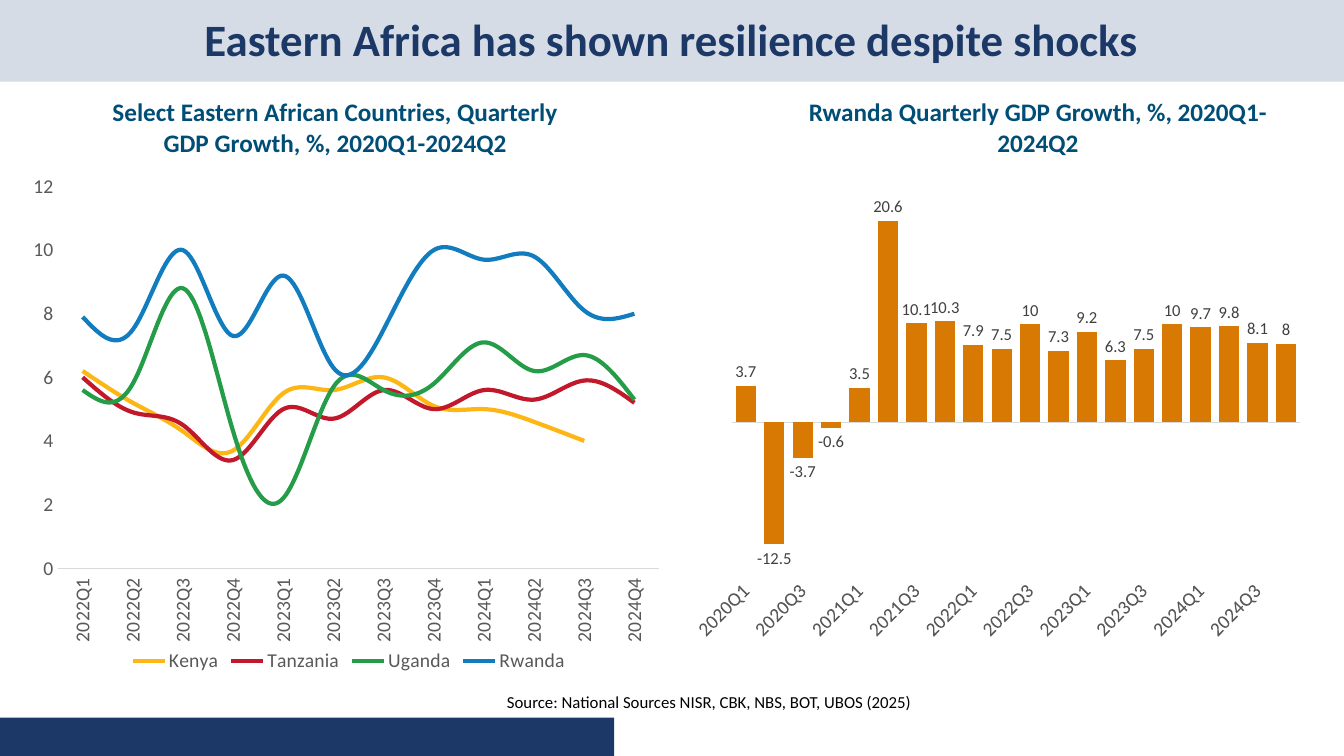
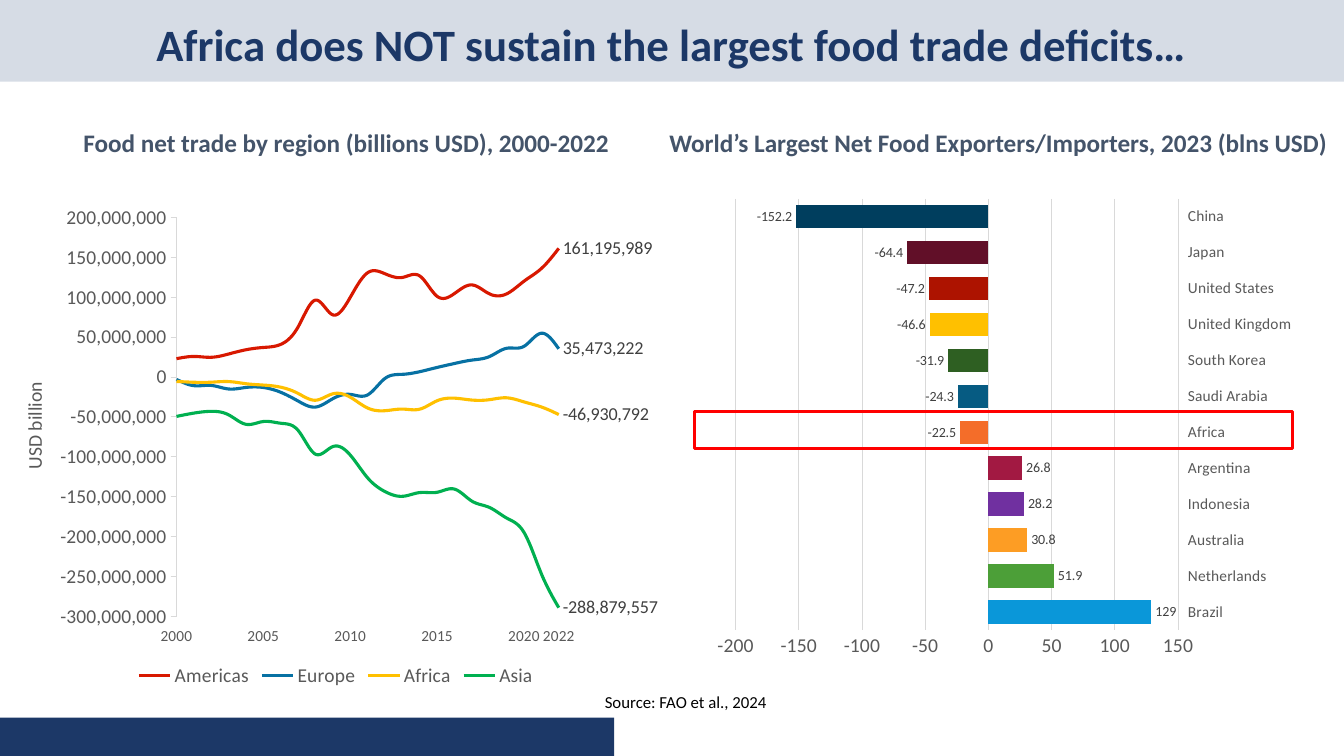
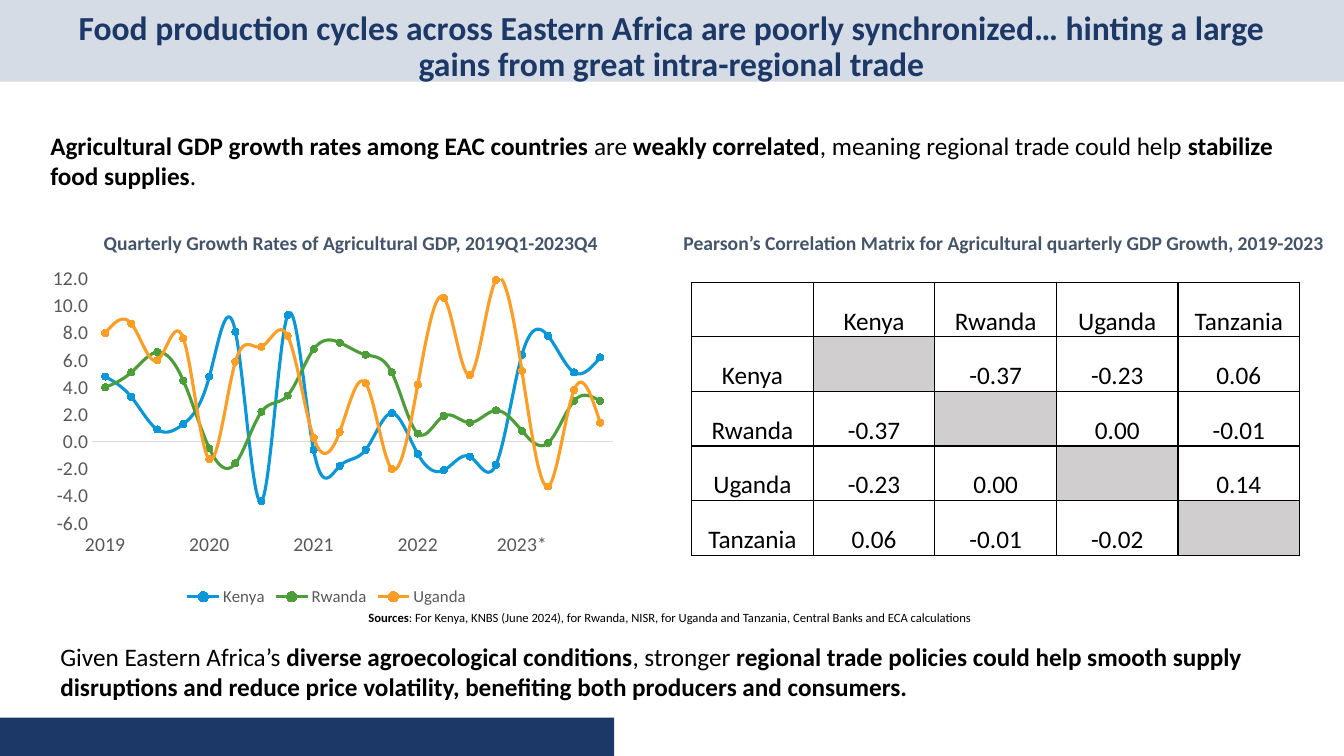
import pptx
import pptx.chart.data
import pptx.dml.color
import pptx.enum.chart
import pptx.enum.shapes
import pptx.enum.text
import pptx.oxml
import pptx.oxml.ns
import pptx.util

Inches, Pt = pptx.util.Inches, pptx.util.Pt
RGBColor = pptx.dml.color.RGBColor
XL_CHART_TYPE = pptx.enum.chart.XL_CHART_TYPE
XL_LABEL_POSITION = pptx.enum.chart.XL_LABEL_POSITION
XL_LEGEND_POSITION = pptx.enum.chart.XL_LEGEND_POSITION
XL_MARKER_STYLE = pptx.enum.chart.XL_MARKER_STYLE
XL_TICK_LABEL_POSITION = pptx.enum.chart.XL_TICK_LABEL_POSITION
XL_TICK_MARK = pptx.enum.chart.XL_TICK_MARK
MSO_SHAPE = pptx.enum.shapes.MSO_SHAPE
MSO_ANCHOR = pptx.enum.text.MSO_ANCHOR
PP_ALIGN = pptx.enum.text.PP_ALIGN
qn = pptx.oxml.ns.qn

FONT = "Calibri"
NAVY = RGBColor(0x1C, 0x38, 0x67)
PALE = RGBColor(0xD6, 0xDC, 0xE5)
TEAL = RGBColor(0x00, 0x4E, 0x76)
SLATE = RGBColor(0x44, 0x54, 0x6A)
BLACK = RGBColor(0, 0, 0)
RED = RGBColor(0xFF, 0, 0)
AXIS_TEXT = RGBColor(0x59, 0x59, 0x59)
LABEL_TEXT = RGBColor(0x40, 0x40, 0x40)
GRID = RGBColor(0xD9, 0xD9, 0xD9)
CELL_GREY = RGBColor(0xD0, 0xCE, 0xCE)
OCHRE = RGBColor(0xD7, 0x79, 0x02)
COUNTRY_COLORS = [RGBColor.from_string(c) for c in ("FEB614", "C1182C", "259C48", "117DBE")]
REGION_COLORS = [RGBColor.from_string(c) for c in ("D81800", "0771A3", "FFC000", "00B050")]
FARM_COLORS = [RGBColor.from_string(c) for c in ("0A97D9", "4C9F38", "FD9D24")]
TRADER_COLORS = [RGBColor.from_string(c) for c in (
    "0A97D9", "4C9F38", "FD9D24", "7030A0", "A21942", "F46D29",
    "065B82", "2E5F22", "FFC000", "AD1300", "610F28", "003E5E")]

GROWTH = {
    "Kenya": (6.2, 5.2, 4.3, 3.7, 5.5, 5.6, 6, 5.1, 5, 4.6, 4, None),
    "Tanzania": (6, 4.9, 4.5, 3.4, 5, 4.7, 5.6, 5, 5.6, 5.3, 5.9, 5.2),
    "Uganda": (5.6, 5.8, 8.8, 4.3, 2.2, 5.7, 5.6, 5.8, 7.1, 6.2, 6.7, 5.3),
    "Rwanda": (7.9, 7.5, 10, 7.3, 9.2, 6.3, 7.5, 10, 9.7, 9.8, 8.1, 8),
}
RWANDA_GROWTH = {"Rwanda": (3.7, -12.5, -3.7, -0.6, 3.5, 20.6, 10.1, 10.3, 7.9, 7.5,
                            10, 7.3, 9.2, 6.3, 7.5, 10, 9.7, 9.8, 8.1, 8)}
FOOD_TRADE = {
    "Americas": (23031802, 25845489, 24791577, 28892051, 34222370, 37089189, 40968013,
                 62795645, 96405019, 77938986, 99847146, 130705145, 129424821, 124817669,
                 126662501, 101152998, 104689647, 115448118, 104366032, 104254573,
                 120110946, 136025528, 161195989),
    "Europe": (-2930491, -10748053, -10471509, -14908604, -12994906, -13050476, -19056518,
               -29993297, -37550820, -27055344, -21657718, -22305751, -1708356, 3447562,
               6746101, 12073437, 17022456, 21271677, 25597375, 36059411,
               38537656, 54953165, 35473222),
    "Africa": (-5473221, -6489158, -6409053, -5631708, -8322272, -10012781, -12674646,
               -20483762, -28986510, -20966404, -25198541, -38758501, -42119177, -40071896,
               -40189509, -29663064, -26419032, -28775216, -28353325, -25972701,
               -31102733, -37449048, -46930792),
    "Asia": (-49270842, -45138510, -42919457, -47278627, -59163121, -55664284, -57830807,
             -66786382, -96635126, -87112498, -97708123, -126284992, -143459348, -149411656,
             -144722430, -144348950, -140387046, -155425731, -163262221, -176643002,
             -194667327, -246545376, -288879557),
}
TRADERS = ("Brazil", "Netherlands", "Australia", "Indonesia", "Argentina", "Africa",
           "Saudi Arabia", "South Korea", "United Kingdom", "United States", "Japan", "China")
NET_EXPORTS = {"Net exports": (129, 51.9, 30.8, 28.2, 26.8, -22.5,
                               -24.3, -31.9, -46.6, -47.2, -64.4, -152.2)}
FARM_GROWTH = {
    "Kenya": (4.8, 3.3, 0.9, 1.3, 4.8, 8.1, -4.4, 9.3, -0.6, -1.8,
              -0.6, 2.1, -0.9, -2.1, -1.1, -1.7, 6.4, 7.8, 5.1, 6.2),
    "Rwanda": (4, 5.1, 6.6, 4.5, -0.5, -1.6, 2.2, 3.4, 6.8, 7.3,
               6.4, 5.1, 0.6, 1.9, 1.4, 2.3, 0.8, -0.1, 3, 3),
    "Uganda": (8, 8.7, 6, 7.6, -1.3, 5.9, 7, 7.8, 0.3, 0.7,
               4.3, -2, 4.2, 10.6, 4.9, 11.9, 5.2, -3.3, 3.8, 1.4),
}
CORRELATIONS = (
    ("", "Kenya", "Rwanda", "Uganda", "Tanzania"),
    ("Kenya", "", "-0.37", "-0.23", "0.06"),
    ("Rwanda", "-0.37", "", "0.00", "-0.01"),
    ("Uganda", "-0.23", "0.00", "", "0.14"),
    ("Tanzania", "0.06", "-0.01", "-0.02", ""),
)


def quarters(first, last):
    return [f"{year}Q{q}" for year in range(first, last + 1) for q in range(1, 5)]


def set_font(font, size, color, bold=False):
    font.name, font.size, font.bold = FONT, Pt(size), bold
    font.color.rgb = color


def write(tf, text, size=18, color=BLACK, bold=False, align=PP_ALIGN.LEFT, spacing=None):
    """Fill a text frame; each ** in the text toggles bold."""
    p = tf.paragraphs[0]
    p.alignment = align
    if spacing:
        p.line_spacing = spacing
    for i, part in enumerate(text.split("**")):
        if part:
            r = p.add_run()
            r.text = part
            set_font(r.font, size, color, bold != bool(i % 2))


def add_text(s, box, text, anchor=MSO_ANCHOR.TOP, **style):
    tf = s.shapes.add_textbox(*map(Inches, box)).text_frame
    tf.word_wrap = True
    tf.vertical_anchor = anchor
    write(tf, text, **style)


def add_rect(s, box, fill=None, line=None):
    sp = s.shapes.add_shape(MSO_SHAPE.RECTANGLE, *map(Inches, box))
    sp.shadow.inherit = False
    if fill is None:
        sp.fill.background()
    else:
        sp.fill.solid()
        sp.fill.fore_color.rgb = fill
    if line is None:
        sp.line.fill.background()
    else:
        sp.line.color.rgb = line
        sp.line.width = Pt(2.25)


def add_slide(prs, title, top=0.15, size=32):
    s = prs.slides.add_slide(prs.slide_layouts[6])
    add_rect(s, (0, 0, 13.33, 0.81), fill=PALE)
    add_rect(s, (0, 7.12, 6.09, 0.38), fill=NAVY)
    add_text(s, (0.4, top, 12.52, 0.64), title, anchor=MSO_ANCHOR.MIDDLE, size=size,
             color=NAVY, bold=True, align=PP_ALIGN.CENTER, spacing=0.9)
    return s


def set_plot_layout(chart, plot):
    """Fix the inner plot area, given as fractions of the chart."""
    area = chart._chartSpace.chart.plotArea
    for old in area.findall(qn("c:layout")):
        area.remove(old)
    sizes = "".join(f'<c:{tag} val="{v}"/>' for tag, v in zip("xywh", plot))
    area.insert(0, pptx.oxml.parse_xml(
        '<c:layout xmlns:c="http://schemas.openxmlformats.org/drawingml/2006/chart">'
        '<c:manualLayout><c:layoutTarget val="inner"/><c:xMode val="edge"/>'
        f'<c:yMode val="edge"/>{sizes}</c:manualLayout></c:layout>'))


def style_axis(axis, size=14, line=None, rotation=None):
    axis.has_major_gridlines = False
    axis.major_tick_mark = axis.minor_tick_mark = XL_TICK_MARK.NONE
    set_font(axis.tick_labels.font, size, AXIS_TEXT)
    body = axis._element.find(qn("c:txPr")).find(qn("a:bodyPr"))
    body.set("rot", str(60000 * (-1000 if rotation is None else rotation)))
    body.set("vert", "horz")
    if line is None:
        axis.format.line.fill.background()
    else:
        axis.format.line.color.rgb = line
        axis.format.line.width = Pt(0.75)


def add_chart(s, kind, box, cats, values, plot, scale, number_format="General",
              cat_size=14, cat_line=GRID, rotation=None):
    """Add a chart with plain axes; scale is (minimum, maximum, step)."""
    data = pptx.chart.data.CategoryChartData(number_format=number_format)
    data.categories = cats
    for name, vals in values.items():
        data.add_series(name, vals)
    chart = s.shapes.add_chart(kind, *map(Inches, box), data).chart
    chart.has_title = chart.has_legend = False
    set_font(chart.font, 14, BLACK)
    set_plot_layout(chart, plot)
    chart.plots[0].vary_by_categories = False
    style_axis(chart.category_axis, cat_size, cat_line, rotation)
    chart.category_axis.tick_label_position = XL_TICK_LABEL_POSITION.LOW
    axis = chart.value_axis
    style_axis(axis)
    axis.minimum_scale, axis.maximum_scale, axis.major_unit = scale
    axis.tick_labels.number_format = number_format
    axis.tick_labels.number_format_is_linked = False
    return chart


def set_cross_between(chart, mode):
    """Start the lines on the value axis (midCat) or half a step in (between)."""
    axis = chart.value_axis._element
    for old in axis.findall(qn("c:crossBetween")):
        axis.remove(old)
    cross = axis.makeelement(qn("c:crossBetween"), {"val": mode})
    axis.find(qn("c:crosses")).addnext(cross)


def style_lines(chart, colors, width=2.25, legend_size=14, markers=False, cross="between"):
    set_cross_between(chart, cross)
    for ser, color in zip(chart.plots[0].series, colors):
        ser.smooth = True
        ser.format.line.color.rgb = color
        ser.format.line.width = Pt(width)
        if markers:
            ser.marker.style, ser.marker.size = XL_MARKER_STYLE.CIRCLE, 5
            ser.marker.format.fill.solid()
            ser.marker.format.fill.fore_color.rgb = color
            ser.marker.format.line.color.rgb = color
        else:
            ser.marker.style = XL_MARKER_STYLE.NONE
    chart.has_legend = True
    chart.legend.position = XL_LEGEND_POSITION.BOTTOM
    chart.legend.include_in_layout = False
    set_font(chart.legend.font, legend_size, AXIS_TEXT)


def style_bars(chart, colors, gap, label_size):
    plot = chart.plots[0]
    plot.gap_width = gap
    ser = plot.series[0]
    ser.invert_if_negative = False
    for i, color in enumerate(colors):
        fill = ser.points[i].format.fill
        fill.solid()
        fill.fore_color.rgb = color
    labels = ser.data_labels
    labels.show_value = True
    labels.position = XL_LABEL_POSITION.OUTSIDE_END
    set_font(labels.font, label_size, LABEL_TEXT)


def label_last_points(chart):
    for ser in chart.plots[0].series:
        ser.data_labels.show_value = False
        label = ser.points[len(ser.values) - 1].data_label
        set_font(label.font, 13, LABEL_TEXT)
        label.position = XL_LABEL_POSITION.RIGHT


def set_label_skip(chart, step):
    axis = chart.category_axis._element
    skip = axis.makeelement(qn("c:tickLblSkip"), {"val": str(step)})
    axis.find(qn("c:noMultiLvlLbl")).addprevious(skip)


def add_border(cell):
    pr = cell._tc.get_or_add_tcPr()
    for i, side in enumerate(("lnL", "lnR", "lnT", "lnB")):
        pr.insert(i, pptx.oxml.parse_xml(
            f'<a:{side} xmlns:a="http://schemas.openxmlformats.org/drawingml/2006/main" '
            f'w="12700"><a:solidFill><a:srgbClr val="{str(BLACK)}"/></a:solidFill></a:{side}>'))


def add_matrix(s, box, rows):
    n = len(rows)
    table = s.shapes.add_table(n, n, *map(Inches, box)).table
    table.horz_banding = table.first_row = False
    for i, row in enumerate(rows):
        table.columns[i].width = Inches(box[2] / n)
        table.rows[i].height = Inches(box[3] / n)
        for j, text in enumerate(row):
            cell = table.cell(i, j)
            cell.margin_left = cell.margin_right = cell.margin_top = Inches(0.01)
            cell.margin_bottom = 0
            cell.vertical_anchor = MSO_ANCHOR.BOTTOM
            if i == j and i > 0:
                cell.fill.solid()
                cell.fill.fore_color.rgb = CELL_GREY
            else:
                cell.fill.background()
            add_border(cell)
            write(cell.text_frame, text, align=PP_ALIGN.CENTER)


def add_resilience_slide(prs):
    s = add_slide(prs, "Eastern Africa has shown resilience despite shocks", top=0.1)
    lines = add_chart(s, XL_CHART_TYPE.LINE, (0.25, 1.31, 6.42, 5.41), quarters(2022, 2024),
                      GROWTH, (0.05, 0.1, 0.93, 0.7), (0, 12, 2), rotation=-90)
    style_lines(lines, COUNTRY_COLORS, width=3)
    bars = add_chart(s, XL_CHART_TYPE.COLUMN_CLUSTERED, (6.87, 1.41, 6.21, 5.04),
                     quarters(2020, 2024), RWANDA_GROWTH, (0.05, 0.07, 0.92, 0.77),
                     (-15, 25, 5), rotation=-45)
    bars.value_axis.visible = False
    bars.plots[0].overlap = -17
    set_label_skip(bars, 2)
    style_bars(bars, [OCHRE] * 20, gap=40, label_size=12)
    for left, heading in (
            (0.81, "Select Eastern African Countries, Quarterly GDP Growth, %, 2020Q1-2024Q2"),
            (7.78, "Rwanda Quarterly GDP Growth, %, 2020Q1-2024Q2")):
        add_text(s, (left, 0.91, 5.03, 0.71), heading, color=TEAL, bold=True,
                 align=PP_ALIGN.CENTER)
    add_text(s, (3.7, 6.81, 6.67, 0.3),
             "Source: National Sources NISR, CBK, NBS, BOT, UBOS (2025)",
             size=12, align=PP_ALIGN.CENTER)


def add_trade_slide(prs):
    s = add_slide(prs, "Africa does NOT sustain the largest food trade deficits…")
    years = [str(y) if y % 5 == 0 or y == 2022 else "" for y in range(2000, 2023)]
    lines = add_chart(s, XL_CHART_TYPE.LINE, (0.17, 1.91, 6.37, 4.95), years, FOOD_TRADE,
                      (0.25, 0.05, 0.6, 0.8), (-300000000, 200000000, 50000000),
                      number_format="#,##0", cat_size=11, cat_line=None)
    style_lines(lines, REGION_COLORS, cross="midCat")
    label_last_points(lines)
    set_label_skip(lines, 1)
    axis = lines.value_axis
    axis.major_tick_mark = XL_TICK_MARK.OUTSIDE
    axis.format.line.color.rgb = GRID
    axis.format.line.width = Pt(0.75)
    write(axis.axis_title.text_frame, "USD billion", size=14, color=AXIS_TEXT,
          align=PP_ALIGN.CENTER)

    bars = add_chart(s, XL_CHART_TYPE.BAR_CLUSTERED, (7, 1.73, 5.93, 4.86), TRADERS,
                     NET_EXPORTS, (0.05, 0.05, 0.74, 0.88), (-200, 150, 50), cat_size=11)
    style_bars(bars, TRADER_COLORS, gap=54, label_size=10)
    bars.category_axis.tick_label_position = XL_TICK_LABEL_POSITION.HIGH
    bars.value_axis.has_major_gridlines = True
    grid = bars.value_axis.major_gridlines.format.line
    grid.color.rgb, grid.width = GRID, Pt(0.75)
    add_rect(s, (6.89, 4.08, 5.93, 0.37), line=RED)

    add_text(s, (0.53, 1.21, 5.81, 0.4), "Food net trade by region (billions USD), 2000-2022",
             color=SLATE, bold=True, align=PP_ALIGN.CENTER)
    add_text(s, (6.54, 1.21, 6.79, 0.4),
             "World’s Largest Net Food Exporters/Importers, 2023 (blns USD)",
             color=SLATE, bold=True)
    add_text(s, (5.9, 6.81, 1.98, 0.3), "Source: FAO et al., 2024", size=12)


def add_cycles_slide(prs):
    s = add_slide(prs, "Food production cycles across Eastern Africa are poorly synchronized… "
                       "hinting a large gains from great intra-regional trade", size=24)
    add_text(s, (0.4, 1.24, 12.72, 0.71),
             "**Agricultural GDP growth rates among EAC countries** are **weakly correlated**, "
             "meaning regional trade could help **stabilize food supplies**.")
    add_text(s, (0.5, 6.31, 12.38, 0.71),
             "Given Eastern Africa’s **diverse agroecological conditions**, stronger "
             "**regional trade policies could help smooth supply disruptions and reduce price "
             "volatility, benefiting both producers and consumers.**")
    years = [label for year in ("2019", "2020", "2021", "2022", "2023*")
             for label in (year, "", "", "")]
    lines = add_chart(s, XL_CHART_TYPE.LINE_MARKERS, (0.01, 2.44, 6.46, 3.62), years,
                      FARM_GROWTH, (0.14, 0.09, 0.8, 0.67), (-6, 12, 2), number_format="0.0")
    style_lines(lines, FARM_COLORS, legend_size=12, markers=True)
    set_label_skip(lines, 1)
    for left, width, heading in (
            (0.93, 5.34, "Quarterly Growth Rates of Agricultural GDP, 2019Q1-2023Q4"),
            (6.68, 6.65, "Pearson’s Correlation Matrix for Agricultural quarterly GDP Growth, "
                         "2019-2023")):
        add_text(s, (left, 2.24, width, 0.34), heading, size=14, color=SLATE, bold=True)
    add_text(s, (3.24, 6, 6.8, 0.25),
             "**Sources**: For Kenya, KNBS (June 2024), for Rwanda, NISR, for Uganda and "
             "Tanzania, Central Banks and ECA calculations", size=9, align=PP_ALIGN.CENTER)
    add_matrix(s, (6.86, 2.8, 6.03, 2.71), CORRELATIONS)


def main():
    prs = pptx.Presentation()
    prs.slide_width, prs.slide_height = Inches(13.33), Inches(7.5)
    add_resilience_slide(prs)
    add_trade_slide(prs)
    add_cycles_slide(prs)
    prs.save("out.pptx")


if __name__ == "__main__":
    main()
